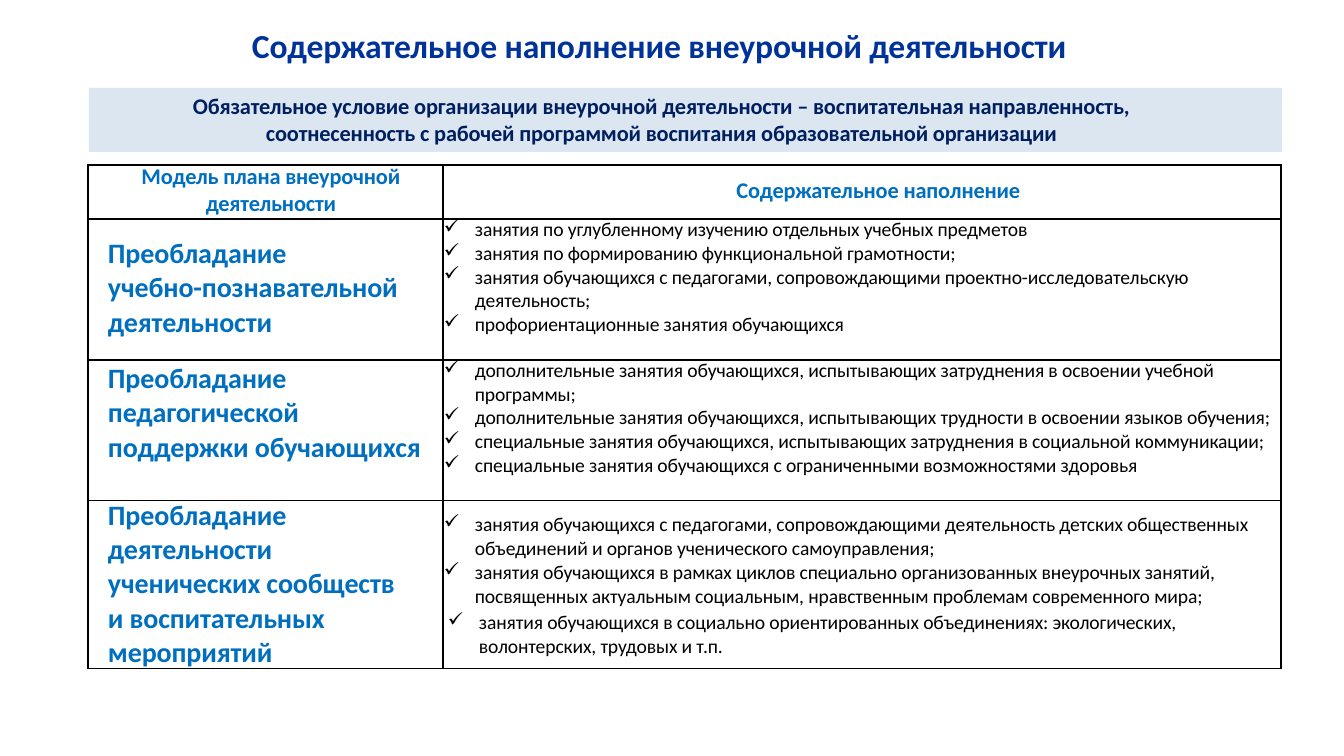
from dataclasses import dataclass
from typing import Optional

from lxml.etree import SubElement
from pptx import Presentation
from pptx.dml.color import RGBColor
from pptx.enum.shapes import MSO_SHAPE
from pptx.enum.text import MSO_ANCHOR, PP_ALIGN
from pptx.oxml.ns import qn
from pptx.util import Emu, Pt

EMU_PER_PX = 914400 / 100.8
FONT = "Calibri"
TITLE_BLUE, BAND_NAVY, MODEL_BLUE = "003399", "001F5F", "006FC0"
BAND_FILL, BLACK = "DCE6F1", "000000"


@dataclass(frozen=True)
class Line:
    """A paragraph; a newline in its text is a line break."""
    text: str
    size: int
    color: str
    bold: bool = True
    margin: int = 0
    indent: int = 0
    centered: bool = False
    before: float = 0
    spacing: Optional[float] = None
    bullet_size: int = 0


@dataclass(frozen=True)
class CellText:
    lines: list[Line]
    top: int = 0


def px(length: int) -> Emu:
    return Emu(round(length * EMU_PER_PX))


def rgb(color: str) -> RGBColor:
    return RGBColor.from_string(color)


def header(text: str, margin: int, **options) -> Line:
    return Line(text, 16, MODEL_BLUE, margin=margin, centered=True, **options)


def model(text: str, **options) -> Line:
    return Line(text, 20, MODEL_BLUE, margin=20, **options)


def activity(text: str, margin: int = 32, bullet_size: int = 14, **options) -> Line:
    return Line(text, 14, BLACK, bold=False, margin=margin, indent=-31,
                bullet_size=bullet_size, **options)


def continuation(text: str) -> Line:
    return Line(text, 14, BLACK, bold=False, margin=32)


def add_run(paragraph, text: str, line: Line) -> None:
    run = paragraph.add_run()
    run.text = text
    run.font.name = FONT
    run.font.size = Pt(line.size)
    run.font.bold = line.bold
    run.font.color.rgb = rgb(line.color)
    run.font._element.set("spc", "-10")


def write_lines(frame, lines: list[Line]) -> None:
    frame.word_wrap = True
    for number, line in enumerate(lines):
        paragraph = frame.add_paragraph() if number else frame.paragraphs[0]
        paragraph.alignment = PP_ALIGN.CENTER if line.centered else PP_ALIGN.LEFT
        paragraph.space_before = Pt(line.before)
        if line.spacing:
            paragraph.line_spacing = Pt(line.spacing)
        properties = paragraph._p.get_or_add_pPr()
        properties.set("marL", str(px(line.margin)))
        properties.set("indent", str(px(line.indent)))
        if line.bullet_size:
            SubElement(properties, qn("a:buSzPts"), val=str(line.bullet_size * 100))
            SubElement(properties, qn("a:buChar"), char="✓")
        for part_number, part in enumerate(line.text.split("\n")):
            if part_number:
                paragraph.add_line_break()
            add_run(paragraph, part, line)


def set_margins(holder, top: int) -> None:
    holder.margin_left = holder.margin_right = holder.margin_bottom = 0
    holder.margin_top = px(top)
    holder.vertical_anchor = MSO_ANCHOR.TOP


def add_borders(cell) -> None:
    properties = cell._tc.get_or_add_tcPr()
    for side in ("lnL", "lnR", "lnT", "lnB"):
        border = SubElement(properties, qn(f"a:{side}"), w=str(Pt(1)))
        fill = SubElement(border, qn("a:solidFill"))
        SubElement(fill, qn("a:srgbClr"), val=BLACK)


def add_title(slide) -> None:
    title = slide.shapes.add_textbox(px(251), px(24), px(826), px(43))
    set_margins(title.text_frame, 1)
    write_lines(title.text_frame, [
        Line("Содержательное наполнение внеурочной деятельности", 24, TITLE_BLUE,
             margin=1, before=1)])


def add_condition_band(slide) -> None:
    band = slide.shapes.add_shape(MSO_SHAPE.RECTANGLE, px(89), px(88), px(1193), px(64))
    band.shadow.inherit = False
    band.fill.solid()
    band.fill.fore_color.rgb = rgb(BAND_FILL)
    band.line.fill.background()
    set_margins(band.text_frame, 4)
    write_lines(band.text_frame, [
        Line("Обязательное условие организации внеурочной деятельности – "
             "воспитательная направленность,\nсоотнесенность с рабочей программой "
             "воспитания образовательной организации",
             16, BAND_NAVY, margin=177, indent=-73, before=2.6)])


def add_plan_table(slide, rows: list[list[CellText]]) -> None:
    widths, heights = [355, 838], [54, 141, 141, 168]
    table = slide.shapes.add_table(len(heights), len(widths), px(88), px(165),
                                   px(sum(widths)), px(sum(heights))).table
    table.first_row = table.horz_banding = False
    for column, width in zip(table.columns, widths):
        column.width = px(width)
    for row, height, contents in zip(table.rows, heights, rows):
        row.height = px(height)
        for cell, content in zip(row.cells, contents):
            add_borders(cell)
            cell.fill.background()
            set_margins(cell, content.top)
            write_lines(cell.text_frame, content.lines)


PLAN = [
    [CellText([header("Модель плана внеурочной", 11, spacing=18.4),
               header("деятельности", 11, spacing=19.1)]),
     CellText([header("Содержательное наполнение", 33, before=8.9)], top=12)],
    [CellText([model("Преобладание", before=13.3),
               model("учебно-познавательной\nдеятельности")], top=18),
     CellText([
         activity("занятия по углубленному изучению отдельных учебных предметов",
                  spacing=16.1),
         activity("занятия по формированию функциональной грамотности;"),
         activity("занятия обучающихся с педагогами, сопровождающими "
                  "проектно-исследовательскую\nдеятельность;"),
         activity("профориентационные занятия обучающихся")])],
    [CellText([model("Преобладание", before=1.3),
               model("педагогической"),
               model("поддержки обучающихся")], top=2),
     CellText([
         activity("дополнительные занятия обучающихся, испытывающих затруднения "
                  "в освоении учебной", spacing=16.1),
         continuation("программы;"),
         activity("дополнительные занятия обучающихся, испытывающих трудности "
                  "в освоении языков обучения;"),
         activity("специальные занятия обучающихся, испытывающих затруднения "
                  "в социальной коммуникации;"),
         activity("специальные занятия обучающихся с ограниченными "
                  "возможностями здоровья")])],
    [CellText([model("Преобладание", spacing=22.9),
               model("деятельности"),
               model("ученических сообществ\nи воспитательных\nмероприятий")]),
     CellText([
         activity("занятия обучающихся с педагогами, сопровождающими деятельность "
                  "детских общественных\nобъединений и органов ученического "
                  "самоуправления;", before=8.9),
         activity("занятия обучающихся в рамках циклов специально организованных "
                  "внеурочных занятий,"),
         continuation("посвященных актуальным социальным, нравственным проблемам "
                      "современного мира;"),
         activity("занятия обучающихся в социально ориентированных объединениях: "
                  "экологических,\nволонтерских, трудовых и т.п.",
                  margin=36, bullet_size=18, before=2)], top=12)],
]


def main() -> None:
    presentation = Presentation()
    presentation.slide_width, presentation.slide_height = px(1344), px(756)
    slide = presentation.slides.add_slide(presentation.slide_layouts[6])
    add_title(slide)
    add_condition_band(slide)
    add_plan_table(slide, PLAN)
    presentation.save("out.pptx")


if __name__ == "__main__":
    main()
